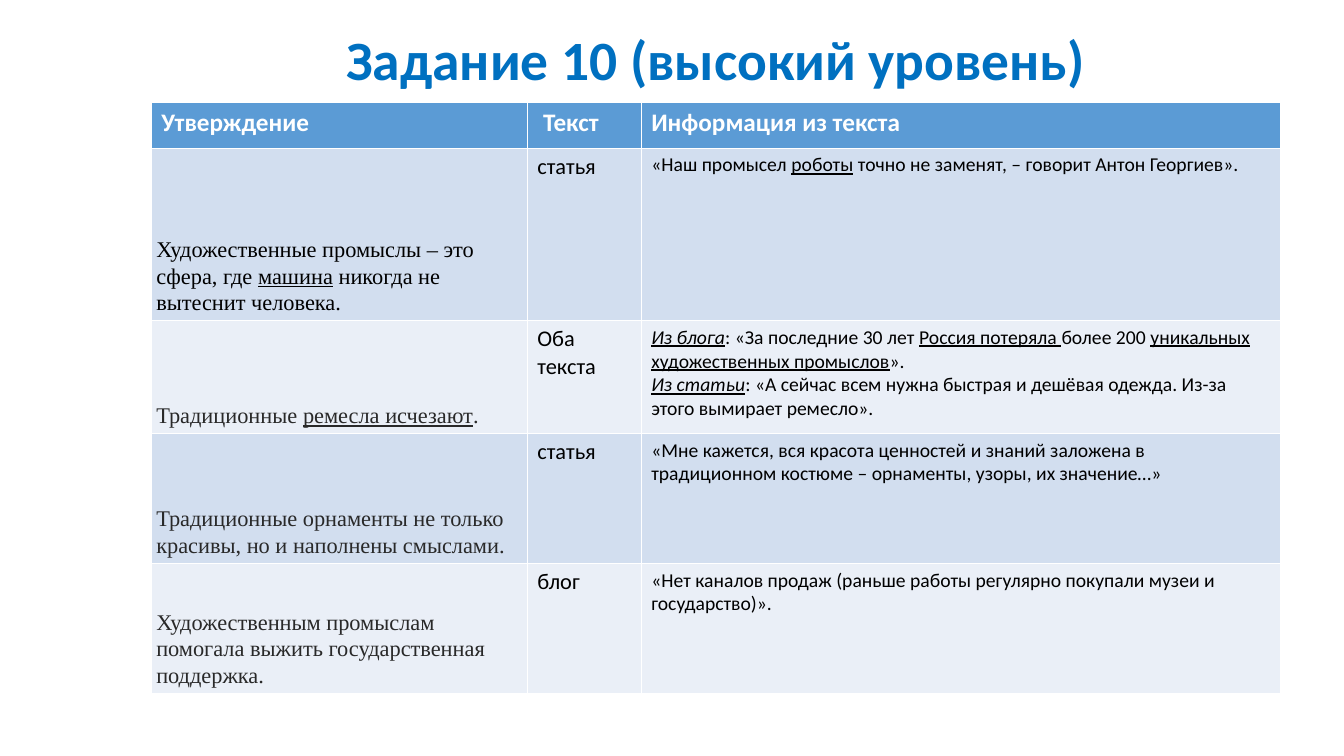
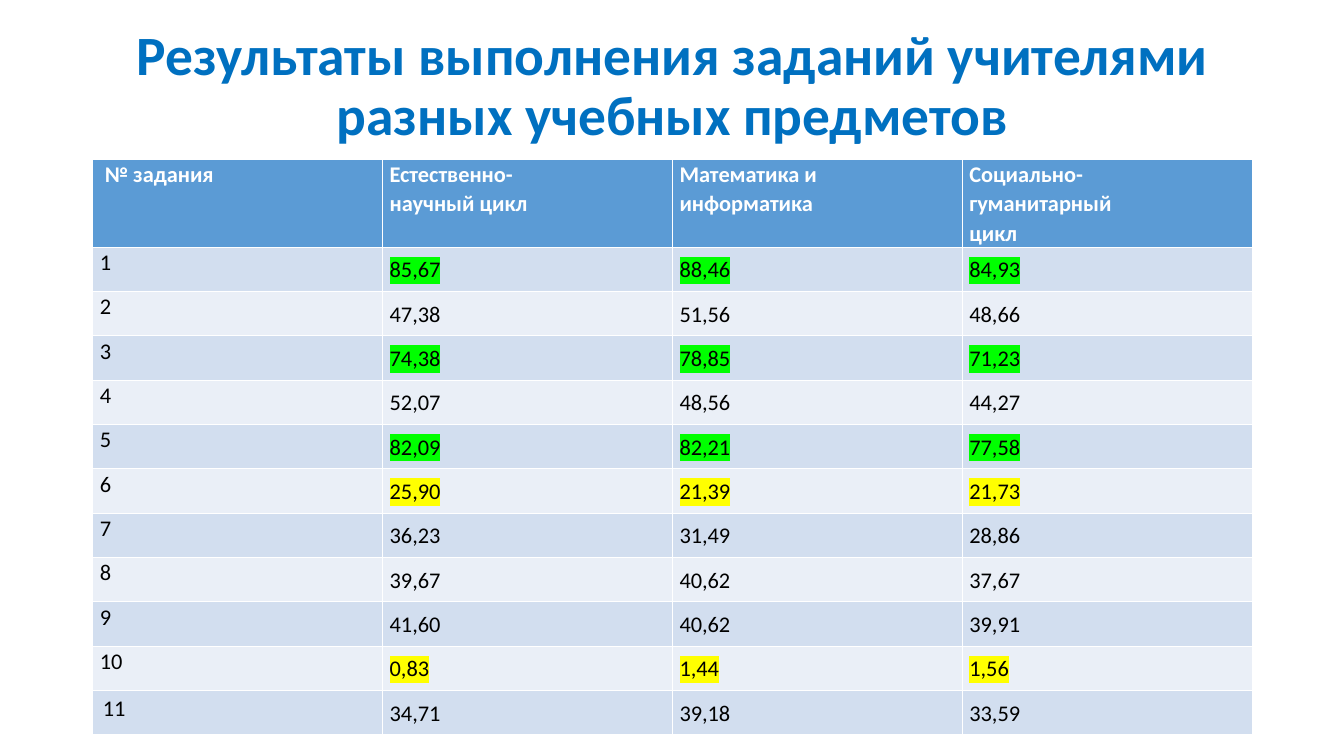
from dataclasses import dataclass, replace
from typing import NamedTuple

from lxml import etree
from pptx import Presentation
from pptx.dml.color import RGBColor
from pptx.enum.text import MSO_ANCHOR, MSO_AUTO_SIZE, PP_ALIGN
from pptx.oxml.ns import qn
from pptx.slide import Slide
from pptx.table import Table, _Cell
from pptx.text.text import Font
from pptx.util import Inches, Pt

TOP, MIDDLE, BOTTOM = MSO_ANCHOR.TOP, MSO_ANCHOR.MIDDLE, MSO_ANCHOR.BOTTOM
CENTER = PP_ALIGN.CENTER
NO_AUTOFIT = MSO_AUTO_SIZE.NONE

TITLE_BLUE = RGBColor(0x00, 0x70, 0xC0)
HEADER_BLUE = RGBColor(0x5B, 0x9B, 0xD5)
BANDS = (RGBColor(0xD2, 0xDE, 0xEF), RGBColor(0xEA, 0xEF, 0xF7))
WHITE = RGBColor(0xFF, 0xFF, 0xFF)
BLACK = RGBColor(0x00, 0x00, 0x00)
DARK_GREY = RGBColor(0x29, 0x29, 0x29)
GREEN = RGBColor(0x00, 0xFF, 0x00)
YELLOW = RGBColor(0xFF, 0xFF, 0x00)

SANS = "Calibri"
SERIF = "Times New Roman"
TITLE_ONLY = 5


class Span(NamedTuple):
    text: str
    underline: bool = False
    italic: bool = False
    highlight: RGBColor | None = None


class Box(NamedTuple):
    left: float
    top: float
    width: float
    height: float


class Claim(NamedTuple):
    statement: list[Span]
    source: str
    evidence: list[list[Span]]
    color: RGBColor = DARK_GREY


class Result(NamedTuple):
    scores: tuple[str, str, str]
    highlight: RGBColor | None = None


@dataclass(frozen=True)
class CellStyle:
    size: float = 16
    color: RGBColor = BLACK
    font: str = SANS
    bold: bool = False
    anchor: MSO_ANCHOR = TOP
    spacing: float = 1.0
    margins: tuple[float, float, float, float] = (0.1, 0.05, 0.1, 0.05)


PLAIN = CellStyle()
EVIDENCE = replace(PLAIN, size=14)
STATEMENT = CellStyle(font=SERIF, anchor=BOTTOM, spacing=1.07, margins=(0.05,) * 4)
CLAIM_HEADER = CellStyle(size=18, color=WHITE, bold=True)
NUMBER = CellStyle(spacing=1.07, margins=(0.07, 0, 0.07, 0))
SCORE = replace(NUMBER, anchor=MIDDLE)
RESULT_HEADER = replace(NUMBER, color=WHITE, bold=True, margins=(0.07, 0, 1, 0))

CLAIM_HEADS = ("Утверждение", " Текст", "Информация из текста")
CLAIMS = (
    Claim(
        [
            Span("Художественные промыслы – это сфера, где "),
            Span("машина", True),
            Span(" никогда не вытеснит человека."),
        ],
        "статья",
        [[
            Span("«Наш промысел "),
            Span("роботы", True),
            Span(" точно не заменят, – говорит Антон Георгиев»."),
        ]],
        BLACK,
    ),
    Claim(
        [Span("Традиционные "), Span("ремесла исчезают", True), Span(".")],
        "Оба текста",
        [
            [
                Span("Из блога", True, True),
                Span(": «За последние 30 лет "),
                Span("Россия потеряла ", True),
                Span("более 200 "),
                Span("уникальных художественных промыслов", True),
                Span("»."),
            ],
            [
                Span("Из статьи", True, True),
                Span(": «А сейчас всем нужна быстрая и дешёвая одежда. "
                     "Из-за этого вымирает ремесло»."),
            ],
        ],
    ),
    Claim(
        [Span("Традиционные орнаменты не только красивы, но и наполнены смыслами.")],
        "статья",
        [[Span("«Мне кажется, вся красота ценностей и знаний заложена "
               "в традиционном костюме – орнаменты, узоры, их значение…»")]],
    ),
    Claim(
        [Span("Художественным промыслам помогала выжить государственная поддержка.")],
        "блог",
        [[Span("«Нет каналов продаж (раньше работы регулярно покупали музеи "
               "и государство)».")]],
    ),
)

RESULT_HEADS = (
    " № задания",
    "Естественно-научный цикл",
    "Математика и информатика",
    "Социально-гуманитарный цикл",
)
RESULTS = (
    Result(("85,67", "88,46", "84,93"), GREEN),
    Result(("47,38", "51,56", "48,66")),
    Result(("74,38", "78,85", "71,23"), GREEN),
    Result(("52,07", "48,56", "44,27")),
    Result(("82,09", "82,21", "77,58"), GREEN),
    Result(("25,90", "21,39", "21,73"), YELLOW),
    Result(("36,23", "31,49", "28,86")),
    Result(("39,67", "40,62", "37,67")),
    Result(("41,60", "40,62", "39,91")),
    Result(("0,83", "1,44", "1,56"), YELLOW),
    Result(("34,71", "39,18", "33,59")),
)


def set_font(font: Font, name: str, size: float, color: RGBColor, bold: bool) -> None:
    font.name = name
    font.size = Pt(size)
    font.bold = bold
    font.color.rgb = color


def add_titled_slide(prs: Presentation, title: str, box: Box) -> Slide:
    s = prs.slides.add_slide(prs.slide_layouts[TITLE_ONLY])
    sp = s.shapes.title
    sp.left, sp.top, sp.width, sp.height = map(Inches, box)
    tf = sp.text_frame
    tf.text = title
    tf.word_wrap = True
    tf.auto_size = NO_AUTOFIT
    tf.vertical_anchor = MIDDLE
    p = tf.paragraphs[0]
    p.alignment = CENTER
    p.line_spacing = 0.9
    set_font(p.font, SANS, 39.6, TITLE_BLUE, True)
    return s


def add_table(s: Slide, left: float, top: float,
              widths: list[float], heights: list[float]) -> Table:
    table = s.shapes.add_table(
        len(heights), len(widths), Inches(left), Inches(top),
        Inches(sum(widths)), Inches(sum(heights)),
    ).table
    for column, width in zip(table.columns, widths):
        column.width = Inches(width)
    for i, (row, height) in enumerate(zip(table.rows, heights)):
        row.height = Inches(height)
        for cell in row.cells:
            cell.fill.solid()
            cell.fill.fore_color.rgb = BANDS[(i - 1) % 2] if i else HEADER_BLUE
    return table


def fill_cell(cell: _Cell, paragraphs: list[list[Span]], style: CellStyle) -> None:
    (cell.margin_left, cell.margin_top,
     cell.margin_right, cell.margin_bottom) = map(Inches, style.margins)
    cell.vertical_anchor = style.anchor
    tf = cell.text_frame
    for i, spans in enumerate(paragraphs):
        p = tf.add_paragraph() if i else tf.paragraphs[0]
        p.line_spacing = style.spacing
        set_font(p.font, style.font, style.size, style.color, style.bold)
        for span in spans:
            r = p.add_run()
            r.text = span.text
            if span.underline:
                r.font.underline = True
            if span.italic:
                r.font.italic = True
            if span.highlight is not None:
                highlight = etree.SubElement(r._r.get_or_add_rPr(), qn("a:highlight"))
                etree.SubElement(highlight, qn("a:srgbClr"), val=str(span.highlight))


def fill_header(table: Table, heads: tuple[str, ...], style: CellStyle) -> None:
    for col, head in enumerate(heads):
        fill_cell(table.cell(0, col), [[Span(head)]], style)


def add_claims_slide(prs: Presentation) -> None:
    s = add_titled_slide(prs, "Задание 10 (высокий уровень)", Box(1.5, 0.31, 11.2, 0.63))
    table = add_table(s, 1.5, 1.02, [3.73, 1.13, 6.34], [0.45, 1.71, 1.12, 1.29, 1.29])
    fill_header(table, CLAIM_HEADS, CLAIM_HEADER)
    for row, claim in enumerate(CLAIMS, 1):
        fill_cell(table.cell(row, 0), [claim.statement],
                  replace(STATEMENT, color=claim.color))
        fill_cell(table.cell(row, 1), [[Span(claim.source)]], PLAIN)
        fill_cell(table.cell(row, 2), claim.evidence, EVIDENCE)


def add_results_slide(prs: Presentation) -> None:
    s = add_titled_slide(
        prs, "Результаты выполнения заданий учителями разных учебных предметов",
        Box(0.92, 0.4, 11.5, 0.94),
    )
    table = add_table(s, 0.92, 1.58, [2.875] * len(RESULT_HEADS),
                      [0.44] * (len(RESULTS) + 1))
    fill_header(table, RESULT_HEADS, RESULT_HEADER)
    for row, result in enumerate(RESULTS, 1):
        style = PLAIN if row == len(RESULTS) else NUMBER
        fill_cell(table.cell(row, 0), [[Span(str(row))]], style)
        for col, score in enumerate(result.scores, 1):
            fill_cell(table.cell(row, col),
                      [[Span(score, highlight=result.highlight)]], SCORE)


def main() -> None:
    prs = Presentation()
    prs.slide_width = Inches(13.33)
    prs.slide_height = Inches(7.5)
    add_claims_slide(prs)
    add_results_slide(prs)
    prs.save("out.pptx")


if __name__ == "__main__":
    main()
